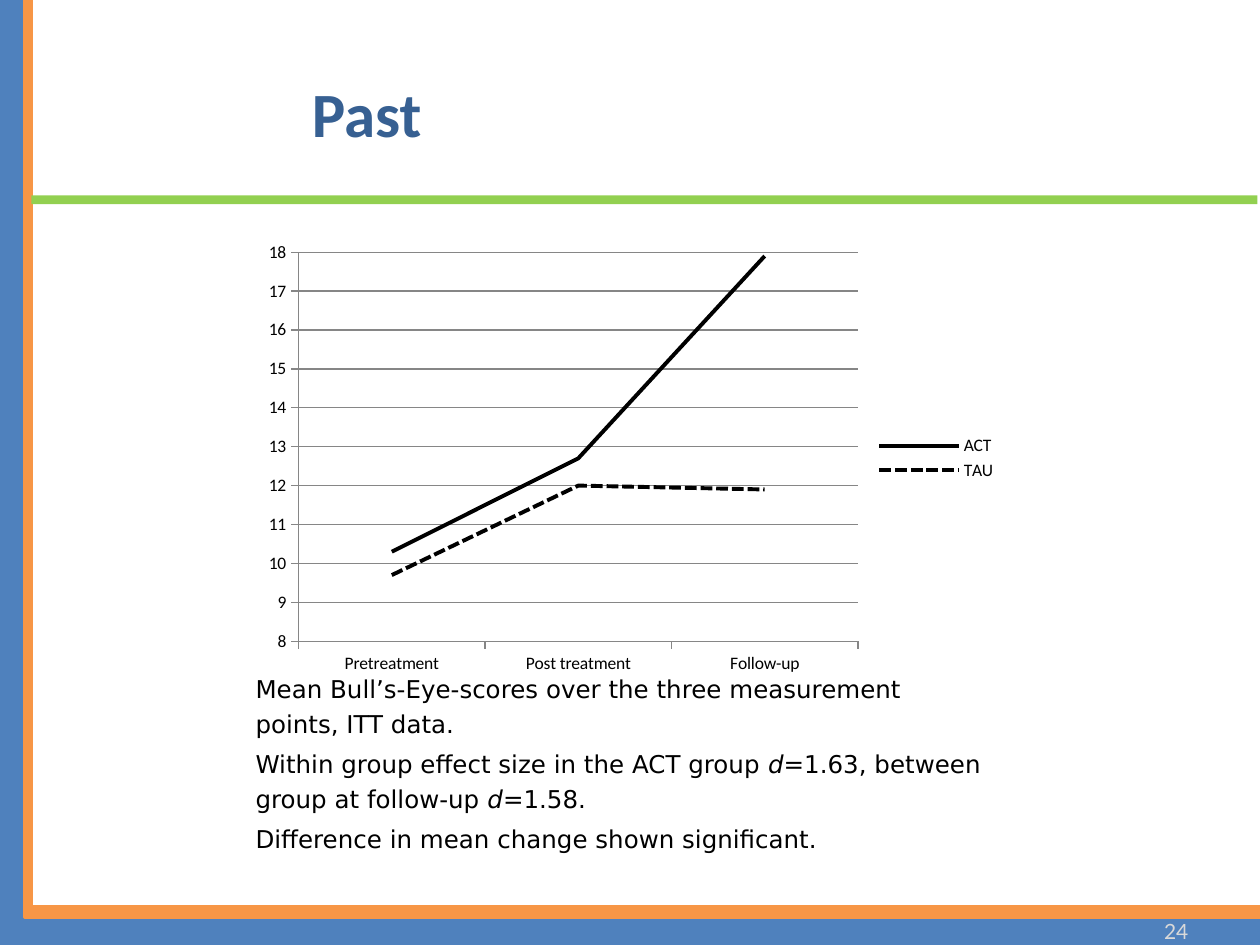
import dataclasses

import pptx
import pptx.chart.data
import pptx.dml.color
import pptx.enum.chart
import pptx.enum.dml
import pptx.enum.shapes
import pptx.enum.text
import pptx.oxml
import pptx.oxml.ns
import pptx.util

Inches, Pt = pptx.util.Inches, pptx.util.Pt
PP_ALIGN = pptx.enum.text.PP_ALIGN
MIDDLE = pptx.enum.text.MSO_ANCHOR.MIDDLE
DASH = pptx.enum.dml.MSO_LINE


@dataclasses.dataclass(frozen=True)
class Theme:
    blue: str = "4F81BD"
    orange: str = "F79646"
    green: str = "92D050"
    title: str = "376092"
    number: str = "D9D9D9"
    text: str = "000000"
    grid: str = "868686"
    heading_font: str = "Calibri"
    body_font: str = "DejaVu Sans"
    number_font: str = "Lato"
    title_size: int = 36
    body_size: int = 14
    number_size: int = 12
    chart_size: int = 10


THEME = Theme()


def rgb(color):
    return pptx.dml.color.RGBColor.from_string(color)


def place(box):
    return [Inches(v) for v in box]


def write(tf, paragraphs, *, font, size, color, bold=None, align=None,
          anchor=None, line_spacing=None, gap=0):
    """Fill a text frame; each paragraph is a list of (text, italic) runs."""
    tf.word_wrap = True
    if anchor is not None:
        tf.vertical_anchor = anchor
    for i, runs in enumerate(paragraphs):
        p = tf.add_paragraph() if i else tf.paragraphs[0]
        p.alignment = align
        p.line_spacing = line_spacing
        p.space_before = Pt(gap if i else 0)
        for text, italic in runs:
            r = p.add_run()
            r.text = text
            r.font.name, r.font.size = font, Pt(size)
            r.font.bold, r.font.italic = bold, italic
            r.font.color.rgb = rgb(color)


def add_bar(slide, box, color, outlined=False):
    sp = slide.shapes.add_shape(pptx.enum.shapes.MSO_SHAPE.RECTANGLE, *place(box))
    sp.shadow.inherit = False
    sp.fill.solid()
    sp.fill.fore_color.rgb = rgb(color)
    if outlined:
        sp.line.color.rgb = rgb(color)
        sp.line.width = Pt(2)
    else:
        sp.line.fill.background()


def add_frame(slide, box):
    """Blue and orange bars along the left and bottom, green rule under the title."""
    x, y, w, h = box
    side, foot, stripe, base = 0.2, 0.22, 0.05, 0.08
    inner = x + side + stripe
    floor = y + h - foot
    add_bar(slide, (x, y, side, h), THEME.blue)
    add_bar(slide, (x + side, floor, w - side, foot), THEME.blue)
    add_bar(slide, (x + side, y, stripe, h - foot), THEME.orange, True)
    add_bar(slide, (inner, floor - base, x + w - inner, base), THEME.orange, True)
    add_bar(slide, (inner, y + 1.55, 9.73, 0.07), THEME.green)


def add_title(slide, box, text):
    sp = slide.shapes.title
    sp.left, sp.top, sp.width, sp.height = place(box)
    write(sp.text_frame, [[(text, None)]], font=THEME.heading_font,
          size=THEME.title_size, color=THEME.title, bold=True,
          align=PP_ALIGN.CENTER, anchor=MIDDLE)


def add_page_number(slide, box, number):
    sp = slide.shapes.add_textbox(*place(box))
    write(sp.text_frame, [[(number, None)]], font=THEME.number_font,
          size=THEME.number_size, color=THEME.number,
          align=PP_ALIGN.RIGHT, anchor=MIDDLE)


def set_plot_area(chart, **fractions):
    """Fix the inner plot area; python-pptx has no method for it."""
    area = chart.element.find(".//" + pptx.oxml.ns.qn("c:plotArea"))
    for old in area.findall(pptx.oxml.ns.qn("c:layout")):
        area.remove(old)
    values = "".join(f'<c:{k} val="{v}"/>' for k, v in fractions.items())
    area.insert(0, pptx.oxml.parse_xml(
        f'<c:layout {pptx.oxml.ns.nsdecls("c")}><c:manualLayout>'
        '<c:layoutTarget val="inner"/><c:xMode val="edge"/><c:yMode val="edge"/>'
        f'{values}</c:manualLayout></c:layout>'))


def add_score_chart(slide, box):
    data = pptx.chart.data.CategoryChartData()
    data.categories = ["Pretreatment", "Post treatment", "Follow-up"]
    data.add_series("ACT", (10.3, 12.7, 17.9))
    data.add_series("TAU", (9.7, 12, 11.9))
    chart = slide.shapes.add_chart(
        pptx.enum.chart.XL_CHART_TYPE.LINE, *place(box), data).chart
    chart.has_title = False
    chart.font.name, chart.font.size = THEME.heading_font, Pt(THEME.chart_size)
    chart.font.color.rgb = rgb(THEME.text)
    chart.has_legend = True
    chart.legend.position = pptx.enum.chart.XL_LEGEND_POSITION.RIGHT
    chart.legend.include_in_layout = False
    set_plot_area(chart, x=0.06, y=0.04, w=0.74, h=0.87)

    values = chart.value_axis
    values.minimum_scale, values.maximum_scale, values.major_unit = 8, 18, 1
    values.has_major_gridlines = True
    values.tick_labels.number_format = "0"
    values.tick_labels.number_format_is_linked = False
    for axis in (values, chart.category_axis):
        axis.major_tick_mark = pptx.enum.chart.XL_TICK_MARK.OUTSIDE
    for line in (values.format.line, values.major_gridlines.format.line,
                 chart.category_axis.format.line):
        line.color.rgb = rgb(THEME.grid)
        line.width = Pt(0.75)

    plot = chart.plots[0]
    plot.vary_by_categories = False
    for series, dash in zip(plot.series, (DASH.SOLID, DASH.SQUARE_DOT)):
        series.smooth = False
        series.marker.style = pptx.enum.chart.XL_MARKER_STYLE.NONE
        line = series.format.line
        line.color.rgb = rgb(THEME.text)
        line.width = Pt(2.25)
        line.dash_style = dash


def add_findings(slide, box):
    sp = slide.shapes.add_textbox(*place(box))
    write(sp.text_frame, [
        [("Mean Bull’s-Eye-scores over the three measurement points, ITT data.", None)],
        [("Within group effect size in the ACT group ", None), ("d", True),
         ("=1.63, between group at follow-up ", None), ("d", True), ("=1.58.", None)],
        [("Difference in mean change shown significant.", None)],
    ], font=THEME.body_font, size=THEME.body_size, color=THEME.text,
        line_spacing=1.2, gap=0.2 * THEME.body_size)


def main():
    prs = pptx.Presentation()
    prs.slide_width, prs.slide_height = Inches(10), Inches(7.5)
    slide = prs.slides.add_slide(prs.slide_layouts.get_by_name("Title Only"))
    add_frame(slide, (0, 0, 10, 7.5))
    add_title(slide, (0.66, 0.62, 4.5, 0.54), "Past")
    add_page_number(slide, (7.2, 7.28, 2.33, 0.22), "24")
    add_score_chart(slide, (2.01, 1.86, 6, 3.55))
    add_findings(slide, (1.93, 5.25, 6, 1.65))
    prs.save("out.pptx")


if __name__ == "__main__":
    main()
